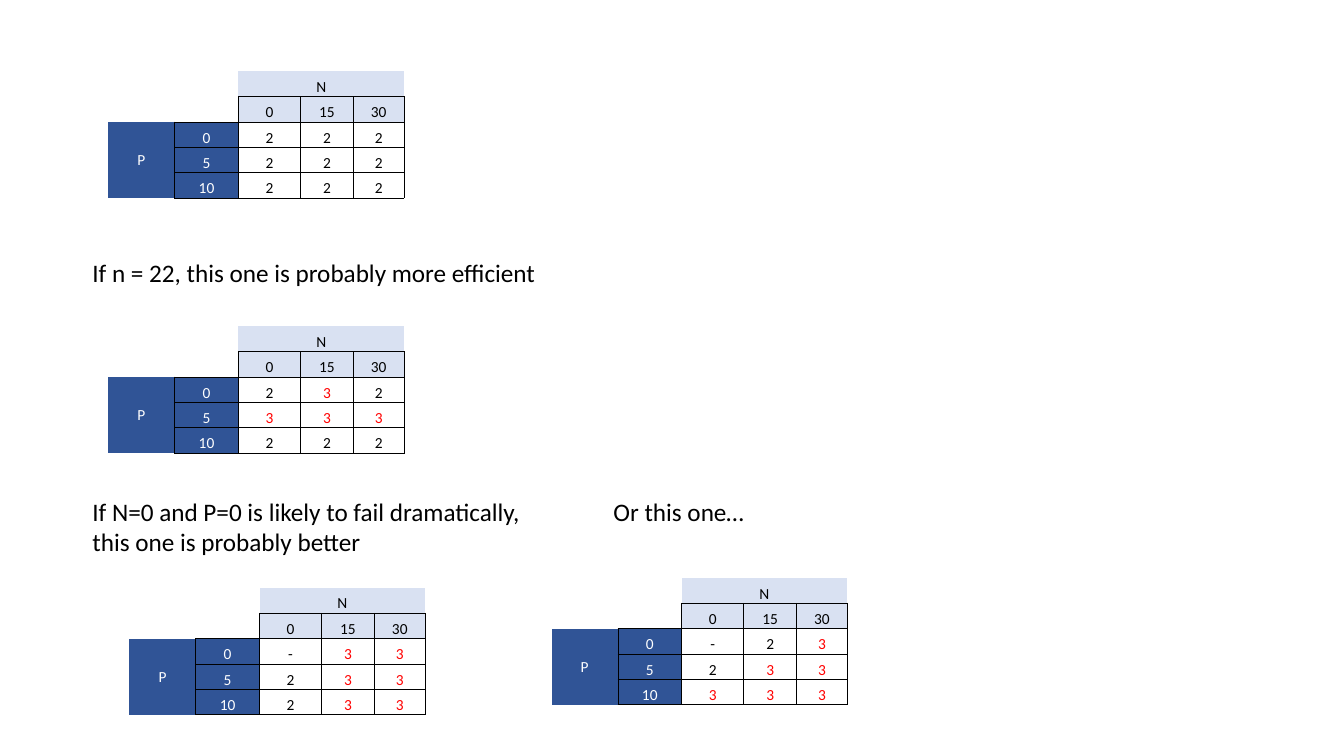
"""Build a slide comparing replicate layouts for an N by P factorial trial."""
import dataclasses

import lxml.etree
import pptx
import pptx.dml.color
import pptx.enum.text
import pptx.oxml.ns
import pptx.util

Cm = pptx.util.Cm
Pt = pptx.util.Pt
RGBColor = pptx.dml.color.RGBColor
Align = pptx.enum.text.PP_ALIGN
Anchor = pptx.enum.text.MSO_ANCHOR

BLACK = RGBColor(0x00, 0x00, 0x00)
WHITE = RGBColor(0xFF, 0xFF, 0xFF)
RED = RGBColor(0xFF, 0x00, 0x00)
PALE_BLUE = RGBColor(0xD9, 0xE1, 0xF2)
DARK_BLUE = RGBColor(0x30, 0x54, 0x96)

FONT = "Calibri"
N_LEVELS = ("0", "15", "30")
P_LEVELS = ("0", "5", "10")
COLUMN_WIDTHS = (1.67, 1.61, 1.56, 1.34, 1.27)
ROW_HEIGHT = 0.64
PLAIN_TABLE_STYLE = "{2D5ABB26-0587-4C30-8999-92F81FD0307C}"


@dataclasses.dataclass(frozen=True)
class Design:
    left: float
    top: float
    replicates: tuple[str, str, str]


@dataclasses.dataclass(frozen=True)
class Remark:
    left: float
    top: float
    width: float
    height: float
    lines: tuple[str, ...]


CONTENT = (
    Design(2.73, 1.79, ("222", "222", "222")),
    Design(2.73, 8.22, ("232", "333", "222")),
    Remark(2.08, 6.35, 11.84, 1.02, ("If n = 22, this one is probably more efficient",)),
    Design(3.26, 14.81, ("-33", "233", "233")),
    Design(13.9, 14.56, ("-23", "233", "333")),
    Remark(2.08, 12.37, 11.56, 1.8, (
        "If N=0 and P=0 is likely to fail dramatically,",
        "this one is probably better",
    )),
    Remark(15.21, 12.37, 3.89, 1.02, ("Or this one…",)),
)


def write(paragraph, text: str, *, size: float, color: RGBColor = BLACK,
          align: Align = Align.LEFT) -> None:
    paragraph.alignment = align
    if not text:
        paragraph._p.get_or_add_endParaRPr().set("sz", str(int(size * 100)))
        return
    run = paragraph.add_run()
    run.text = text
    run.font.name = FONT
    run.font.size = Pt(size)
    run.font.color.rgb = color


def draw_borders(cell, sides: str) -> None:
    properties = cell._tc.get_or_add_tcPr()
    qn = pptx.oxml.ns.qn
    for side in sides:
        line = lxml.etree.SubElement(properties, qn(f"a:ln{side}"), w=str(Pt(0.5)))
        fill = lxml.etree.SubElement(line, qn("a:solidFill"))
        lxml.etree.SubElement(fill, qn("a:srgbClr"), val=str(BLACK))


def border_sides(row: int, column: int) -> str:
    if row == 0:
        return "B" if column >= 2 else ""
    if column == 0:
        return "R" if row >= 2 else ""
    return "RB" if (row, column) == (1, 1) else "LRTB"


def cell_colors(row: int, column: int, text: str) -> tuple[RGBColor | None, RGBColor]:
    if row < 2:
        return (PALE_BLUE if column >= 2 else None), BLACK
    if column < 2:
        return DARK_BLUE, WHITE
    return None, RED if text == "3" else BLACK


def draw_design(slide, design: Design) -> None:
    rows = [("", "", "N", "", ""), ("", "", *N_LEVELS)]
    for index, (level, counts) in enumerate(zip(P_LEVELS, design.replicates)):
        rows.append(("" if index else "P", level, *counts))

    frame = slide.shapes.add_table(
        len(rows), len(COLUMN_WIDTHS), Cm(design.left), Cm(design.top),
        Cm(sum(COLUMN_WIDTHS)), Cm(ROW_HEIGHT * len(rows)))
    grid = frame.table
    grid.first_row = False
    grid.horz_banding = False
    grid._tbl.tblPr.find(pptx.oxml.ns.qn("a:tableStyleId")).text = PLAIN_TABLE_STYLE
    for column, width in zip(grid.columns, COLUMN_WIDTHS):
        column.width = Cm(width)

    for r, texts in enumerate(rows):
        grid.rows[r].height = Cm(ROW_HEIGHT)
        for c, text in enumerate(texts):
            cell = grid.cell(r, c)
            background, ink = cell_colors(r, c, text)
            draw_borders(cell, border_sides(r, c))
            if background is None:
                cell.fill.background()
            else:
                cell.fill.solid()
                cell.fill.fore_color.rgb = background
            cell.margin_left = cell.margin_right = cell.margin_top = Cm(0.02)
            cell.margin_bottom = 0
            cell.vertical_anchor = Anchor.MIDDLE if text == "P" else Anchor.BOTTOM
            write(cell.text_frame.paragraphs[0], text, size=11, color=ink,
                  align=Align.CENTER)
    grid.cell(0, 2).merge(grid.cell(0, 4))
    grid.cell(2, 0).merge(grid.cell(4, 0))


def draw_remark(slide, remark: Remark) -> None:
    box = slide.shapes.add_textbox(
        Cm(remark.left), Cm(remark.top), Cm(remark.width), Cm(remark.height))
    frame = box.text_frame
    frame.word_wrap = False
    frame.auto_size = pptx.enum.text.MSO_AUTO_SIZE.SHAPE_TO_FIT_TEXT
    for index, line in enumerate(remark.lines):
        paragraph = frame.add_paragraph() if index else frame.paragraphs[0]
        write(paragraph, line, size=18)


def main() -> None:
    presentation = pptx.Presentation()
    presentation.slide_width = Cm(33.87)
    presentation.slide_height = Cm(19.05)
    slide = presentation.slides.add_slide(presentation.slide_layouts[6])
    for item in CONTENT:
        if isinstance(item, Design):
            draw_design(slide, item)
        else:
            draw_remark(slide, item)
    presentation.save("out.pptx")


if __name__ == "__main__":
    main()
